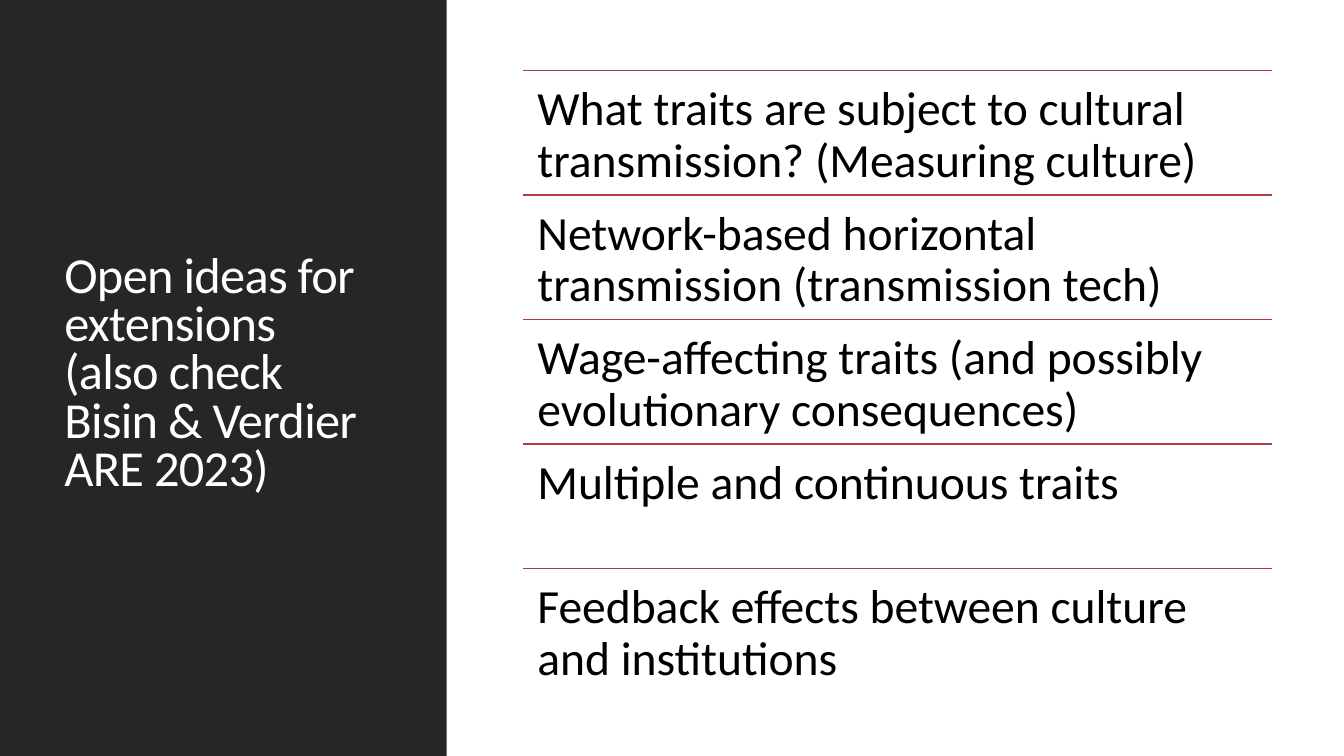
import lxml.etree
import pptx
import pptx.dml.color
import pptx.enum.shapes
import pptx.enum.text
import pptx.oxml.ns
import pptx.util

Inches = pptx.util.Inches
Pt = pptx.util.Pt
Color = pptx.dml.color.RGBColor
Anchor = pptx.enum.text.MSO_ANCHOR

DARK = Color(0x26, 0x26, 0x26)
WHITE = Color(0xFF, 0xFF, 0xFF)
BLACK = Color(0, 0, 0)
RED = Color(0xB1, 0x3B, 0x3E)

TITLE = "Open ideas for extensions \n(also check Bisin & Verdier ARE 2023)"
IDEAS = [
    "What traits are subject to cultural transmission? (Measuring culture)",
    "Network-based horizontal transmission (transmission tech)",
    "Wage-affecting traits (and possibly evolutionary consequences)",
    "Multiple and continuous traits",
    "Feedback effects between culture and institutions",
]


class Page:
    """Holds the style and the current slide."""
    font = "Calibri"

    def __init__(self, slide):
        self.slide = slide
        self.shapes = slide.shapes

    def panel(self, left, top, width, height, color):
        box = self.shapes.add_shape(
            pptx.enum.shapes.MSO_SHAPE.RECTANGLE,
            Inches(left), Inches(top), Inches(width), Inches(height))
        box.shadow.inherit = False
        box.fill.solid()
        box.fill.fore_color.rgb = color
        box.line.fill.background()

    def rule(self, left, top, width, color):
        line = self.shapes.add_connector(
            pptx.enum.shapes.MSO_CONNECTOR.STRAIGHT,
            Inches(left), Inches(top), Inches(left + width), Inches(top))
        line.line.color.rgb = color
        line.line.width = Pt(1.25)
        # An empty effect list removes the shadow
        lxml.etree.SubElement(line._element.spPr,
                              pptx.oxml.ns.qn("a:effectLst"))

    def text(self, words, left, top, width, height, size, color,
             pad=(0.1, 0.05), anchor=Anchor.TOP, lead=0.9, track=0):
        box = self.shapes.add_textbox(
            Inches(left), Inches(top), Inches(width), Inches(height))
        frame = box.text_frame
        frame.word_wrap = True
        frame.vertical_anchor = anchor
        frame.margin_left = frame.margin_right = Inches(pad[0])
        frame.margin_top = frame.margin_bottom = Inches(pad[1])
        para = frame.paragraphs[0]
        para.text = words
        para.line_spacing = lead
        para.font.name = self.font
        para.font.size = Pt(size)
        para.font.color.rgb = color
        # Letter spacing, in hundredths of a point
        if track:
            for run in para.runs:
                props = run._r.get_or_add_rPr()
                props.set("spc", str(round(track * 100)))


def main():
    deck = pptx.Presentation()
    deck.slide_width = Inches(13.33)
    deck.slide_height = Inches(7.5)
    page = Page(deck.slides.add_slide(deck.slide_layouts[6]))

    # Dark side panel with the title
    page.panel(0, 0, 4.43, 7.5, DARK)
    page.text(TITLE, 0.54, 0.57, 3.37, 6.31, 36, WHITE,
              anchor=Anchor.MIDDLE, lead=0.8, track=-0.5)

    # Ideas, each under a red rule
    left, top, width, step = 5.19, 0.7, 7.43, 1.235
    for i, idea in enumerate(IDEAS):
        y = top + i * step
        page.rule(left, y, width, RED)
        page.text(idea, left, y, width, step, 34, BLACK, pad=(0.14, 0.14))

    deck.save("out.pptx")


if __name__ == "__main__":
    main()
